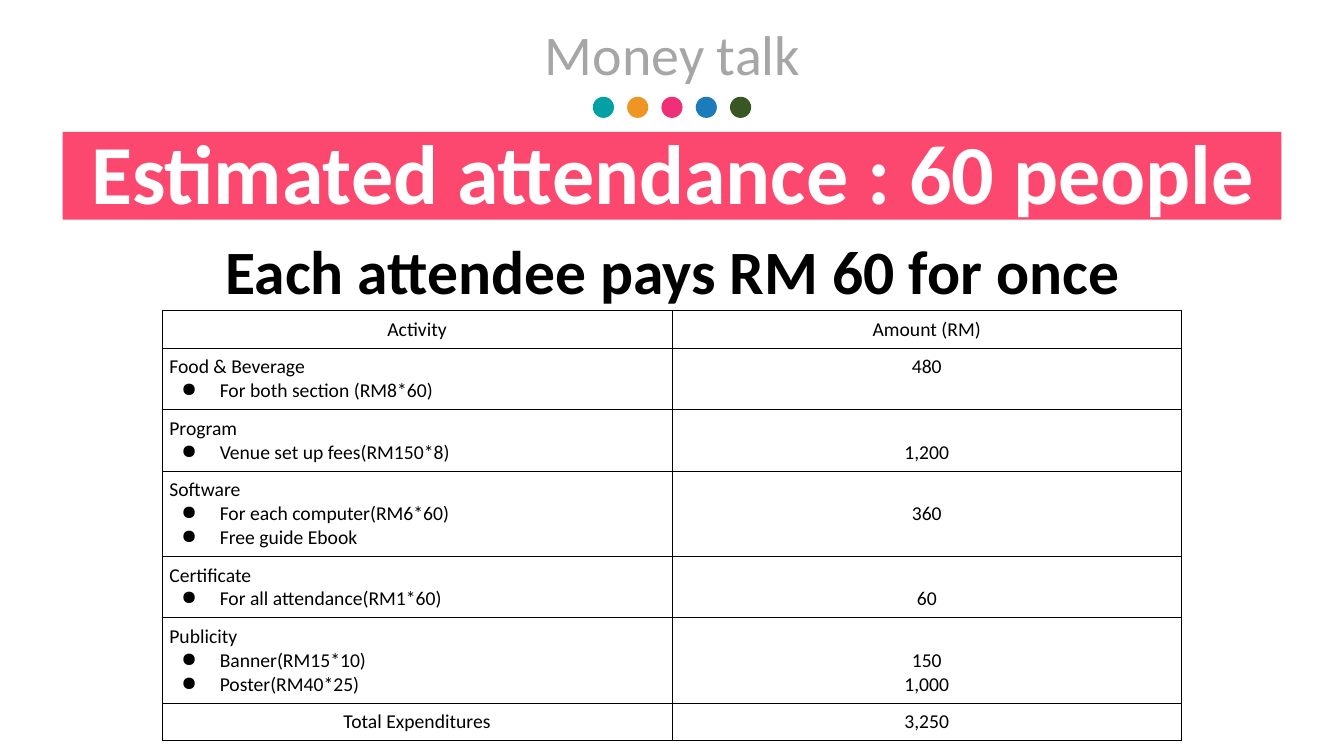
from lxml import etree
from pptx import Presentation
from pptx.dml.color import RGBColor
from pptx.enum import shapes, text
from pptx.oxml import ns
from pptx.util import Inches, Pt

FONT = "Calibri"
BLACK, WHITE, GREY, PINK = "000000", "FFFFFF", "A6A6A6", "FC486E"
DOT_COLOURS = ["03A1A4", "EE9524", "EF3078", "1C7CBB", "385723"]
CENTER, LEFT = text.PP_ALIGN.CENTER, text.PP_ALIGN.LEFT
CELL_MARGIN = 0.07
LINE_HEIGHT = 0.235

# Heading, bulleted details, amounts, number of lines the amounts sit below the top
BUDGET = [
    ("Activity", [], ["Amount (RM)"], 0),
    ("Food & Beverage", ["For both section (RM8*60)"], ["480"], 0),
    ("Program", ["Venue set up fees(RM150*8)"], ["1,200"], 1),
    ("Software", ["For each computer(RM6*60)", "Free guide Ebook"], ["360"], 1),
    ("Certificate", ["For all attendance(RM1*60)"], ["60"], 1),
    ("Publicity", ["Banner(RM15*10)", "Poster(RM40*25)"], ["150", "1,000"], 1),
    ("Total Expenditures", [], ["3,250"], 0),
]


def colour(hex_code):
    return RGBColor.from_string(hex_code)


def write(paragraph, words, size=14, hex_code=BLACK, bold=False, align=CENTER):
    paragraph.alignment = align
    run = paragraph.add_run()
    run.text = words
    run.font.name = FONT
    run.font.size = Pt(size)
    run.font.bold = bold
    run.font.color.rgb = colour(hex_code)


def add_solid(parent, preset, left, top, width, height, hex_code):
    solid = parent.add_shape(preset, *map(Inches, (left, top, width, height)))
    solid.shadow.inherit = False
    solid.fill.solid()
    solid.fill.fore_color.rgb = colour(hex_code)
    solid.line.fill.background()


def add_heading(parent, left, top, width, height, words, **style):
    heading = parent.add_textbox(*map(Inches, (left, top, width, height)))
    heading.text_frame.word_wrap = True
    write(heading.text_frame.paragraphs[0], words, bold=True, **style)


def set_title(slide, words):
    title = slide.shapes.title
    title.left, title.top, title.width, title.height = map(Inches, (2.69, 0.14, 7.96, 0.77))
    frame = title.text_frame
    frame.vertical_anchor = text.MSO_ANCHOR.TOP
    frame.auto_size = text.MSO_AUTO_SIZE.SHAPE_TO_FIT_TEXT
    frame.paragraphs[0].line_spacing = 1.0
    frame.paragraphs[0].space_before = Pt(0)
    write(frame.paragraphs[0], words, size=40, hex_code=GREY)


def add_bullet(paragraph):
    properties = paragraph._p.get_or_add_pPr()
    properties.set("marL", str(Inches(0.5)))
    properties.set("indent", str(-Inches(0.38)))
    etree.SubElement(properties, ns.qn("a:buChar")).set("char", "●")


def add_borders(cell):
    properties = cell._tc.get_or_add_tcPr()
    for position, side in enumerate(("a:lnL", "a:lnR", "a:lnT", "a:lnB")):
        border = etree.Element(ns.qn(side), w=str(Pt(0.75)))
        fill = etree.SubElement(border, ns.qn("a:solidFill"))
        etree.SubElement(fill, ns.qn("a:srgbClr"), val=BLACK)
        properties.insert(position, border)


def fill_cell(cell, lines, align=CENTER, bulleted=False, skipped_lines=0):
    """Write one paragraph per line; bulleted marks every line after the first."""
    cell.fill.background()
    cell.margin_left = cell.margin_right = cell.margin_bottom = Inches(CELL_MARGIN)
    cell.margin_top = Inches(CELL_MARGIN + skipped_lines * LINE_HEIGHT)
    frame = cell.text_frame
    for index, line in enumerate(lines):
        paragraph = frame.add_paragraph() if index else frame.paragraphs[0]
        write(paragraph, line, align=align)
        if bulleted and index:
            add_bullet(paragraph)
    add_borders(cell)


def add_budget(slide):
    frame = slide.shapes.add_table(
        len(BUDGET), 2, Inches(1.61), Inches(3.08), Inches(10.11), Inches(4.24))
    budget = frame.table
    budget.first_row = budget.horz_banding = False
    for row, (activity, details, amounts, skipped) in enumerate(BUDGET):
        lines = [activity] + details
        budget.rows[row].height = Inches(2 * CELL_MARGIN + LINE_HEIGHT * len(lines))
        fill_cell(budget.cell(row, 0), lines, align=LEFT if details else CENTER, bulleted=True)
        fill_cell(budget.cell(row, 1), amounts, skipped_lines=skipped)


def main():
    deck = Presentation()
    deck.slide_width, deck.slide_height = Inches(13.33), Inches(7.5)
    slide = deck.slides.add_slide(deck.slide_layouts[5])

    set_title(slide, "Money talk")
    dots = slide.shapes.add_group_shape().shapes
    for index, hex_code in enumerate(DOT_COLOURS):
        add_solid(dots, shapes.MSO_SHAPE.OVAL, 5.88 + 0.34 * index, 0.96, 0.21, 0.21, hex_code)

    banner = slide.shapes.add_group_shape().shapes
    add_solid(banner, shapes.MSO_SHAPE.RECTANGLE, 0.62, 1.31, 12.09, 0.87, PINK)
    add_heading(banner, 0.63, 1.15, 12.09, 1.11, "Estimated attendance : 60 people",
                size=60, hex_code=WHITE)
    add_heading(slide.shapes, 0.96, 2.26, 11.43, 1.75, "Each attendee pays RM 60 for once",
                size=44)
    add_budget(slide)
    deck.save("out.pptx")


if __name__ == "__main__":
    main()
